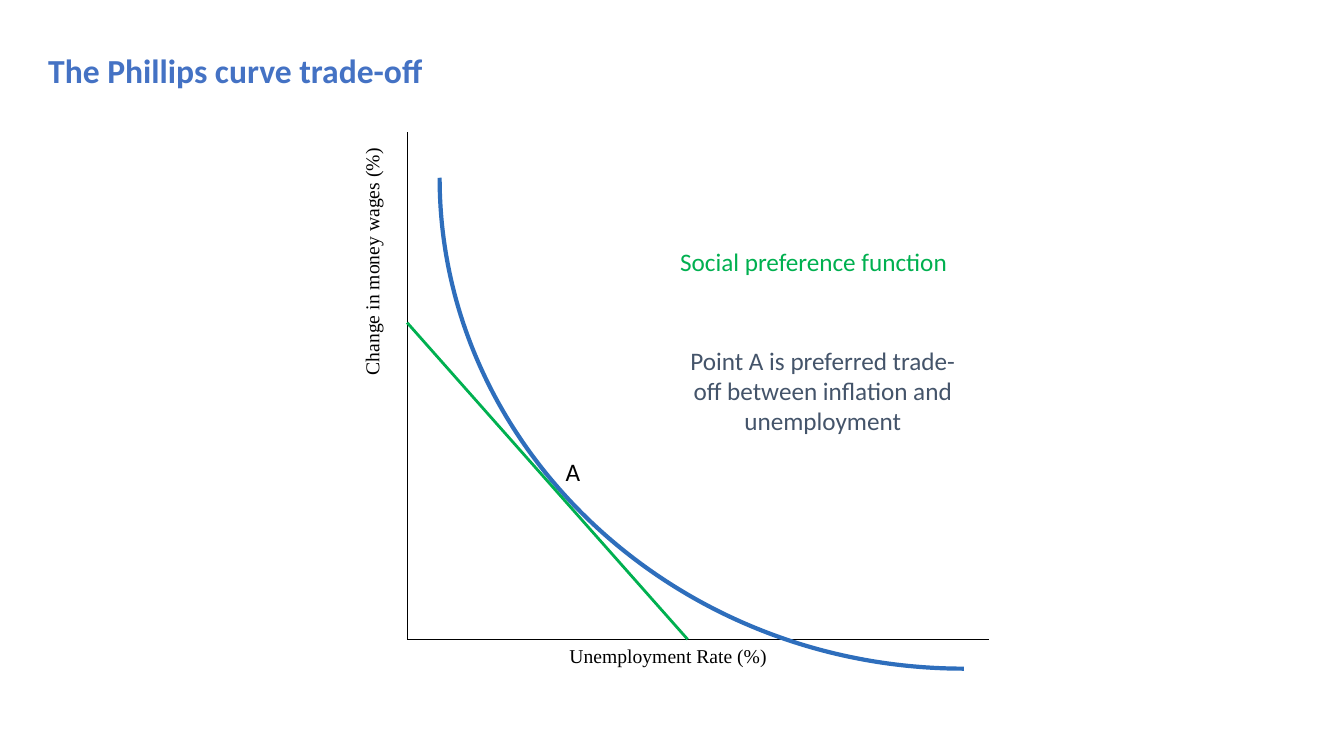
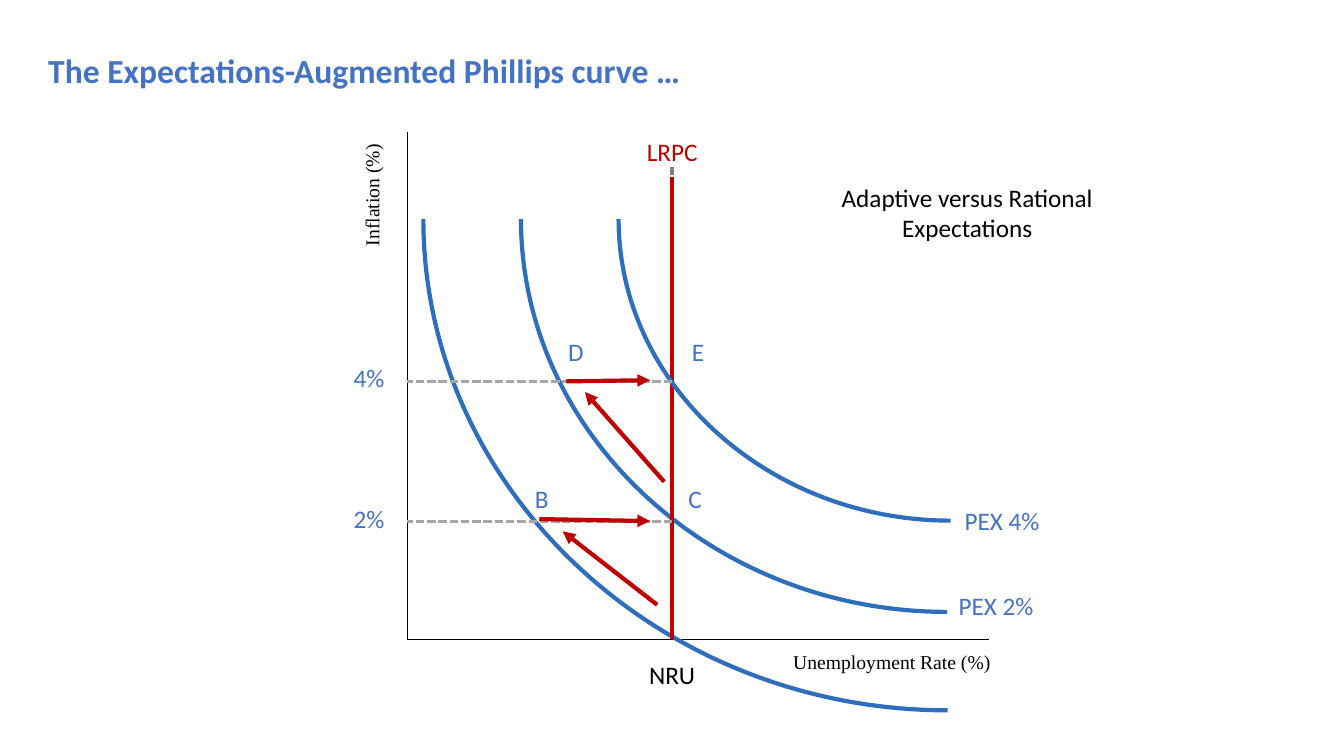
from dataclasses import dataclass
from typing import Optional

import pptx
import pptx.dml.color
import pptx.enum.dml
import pptx.enum.shapes
import pptx.enum.text
import pptx.oxml
import pptx.oxml.ns
import pptx.presentation
import pptx.slide
import pptx.text.text
import pptx.util

Cm = pptx.util.Cm
RGBColor = pptx.dml.color.RGBColor
ALIGN = pptx.enum.text.PP_ALIGN
DASHED = pptx.enum.dml.MSO_LINE.SQUARE_DOT
DRAWING_NS = pptx.oxml.ns.nsdecls("a")

BLACK = RGBColor(0x00, 0x00, 0x00)
BLUE = RGBColor(0x44, 0x72, 0xC4)
CURVE_BLUE = RGBColor(0x2E, 0x6E, 0xBC)
GREEN = RGBColor(0x00, 0xB0, 0x50)
RED = RGBColor(0xC0, 0x00, 0x00)
SLATE = RGBColor(0x44, 0x54, 0x6A)
GRAY = RGBColor(0x80, 0x80, 0x80)
LIGHT_GRAY = RGBColor(0xA6, 0xA6, 0xA6)

BODY_FONT = "Calibri"
AXIS_FONT = "Times New Roman"

ORIGIN_X, ORIGIN_Y = 10.26, 16.11
AXIS_RIGHT, AXIS_TOP = 24.93, 3.33
NRU_X = 16.94
QUARTER_ELLIPSE = 0.55


@dataclass(frozen=True)
class Label:
    text: str
    left: float
    top: float
    width: float
    height: float = 1.02
    color: RGBColor = BLUE
    align: Optional[ALIGN] = ALIGN.CENTER


@dataclass(frozen=True)
class AxisLabel:
    text: str
    left: float
    top: float
    width: float
    height: float
    align: ALIGN = ALIGN.JUSTIFY
    vertical: bool = False


@dataclass(frozen=True)
class Line:
    x1: float
    y1: float
    x2: float
    y2: float
    color: RGBColor = RED
    weight: float = 3
    dash: Optional[pptx.enum.dml.MSO_LINE] = None
    arrow: bool = False


@dataclass(frozen=True)
class Curve:
    left: float
    top: float
    width: float
    height: float


def write(frame: pptx.text.text.TextFrame, text: str, *, size: float = 18,
          color: RGBColor = BLACK, font: str = BODY_FONT, bold: bool = False,
          align: Optional[ALIGN] = None, space_after: Optional[float] = None,
          line_spacing: Optional[float] = None) -> None:
    frame.word_wrap = True
    paragraph = frame.paragraphs[0]
    paragraph.text = text
    paragraph.alignment = align
    paragraph.line_spacing = line_spacing
    if space_after is not None:
        paragraph.space_after = pptx.util.Pt(space_after)
    paragraph.font.size = pptx.util.Pt(size)
    paragraph.font.name = font
    paragraph.font.bold = bold
    paragraph.font.color.rgb = color


def add_frame(slide: pptx.slide.Slide, box: Label | AxisLabel) -> pptx.text.text.TextFrame:
    return slide.shapes.add_textbox(
        Cm(box.left), Cm(box.top), Cm(box.width), Cm(box.height)).text_frame


def add_label(slide: pptx.slide.Slide, label: Label) -> None:
    frame = add_frame(slide, label)
    write(frame, label.text, color=label.color, align=label.align)
    frame.auto_size = pptx.enum.text.MSO_AUTO_SIZE.SHAPE_TO_FIT_TEXT


def add_axis_label(slide: pptx.slide.Slide, label: AxisLabel) -> None:
    frame = add_frame(slide, label)
    write(frame, label.text, size=14, font=AXIS_FONT, align=label.align, space_after=6)
    if label.vertical:
        frame._txBody.bodyPr.set("vert", "vert270")
        frame.margin_left = frame.margin_right = Cm(0.25)
        frame.margin_top = frame.margin_bottom = Cm(0.13)
        frame.margin_left, frame.margin_top = frame.margin_top, frame.margin_left
        frame.margin_right, frame.margin_bottom = frame.margin_bottom, frame.margin_right


def add_line(slide: pptx.slide.Slide, line: Line) -> None:
    connector = slide.shapes.add_connector(
        pptx.enum.shapes.MSO_CONNECTOR.STRAIGHT,
        Cm(line.x1), Cm(line.y1), Cm(line.x2), Cm(line.y2))
    connector.line.color.rgb = line.color
    connector.line.width = pptx.util.Pt(line.weight)
    if line.dash is not None:
        connector.line.dash_style = line.dash
    properties = connector._element.spPr
    if line.arrow:
        outline = properties.find(pptx.oxml.ns.qn("a:ln"))
        outline.append(pptx.oxml.parse_xml(f'<a:tailEnd {DRAWING_NS} type="triangle"/>'))
    properties.append(pptx.oxml.parse_xml(f"<a:effectLst {DRAWING_NS}/>"))


def add_curve(slide: pptx.slide.Slide, curve: Curve) -> None:
    right, bottom = curve.left + curve.width, curve.top + curve.height
    builder = slide.shapes.build_freeform(Cm(right), Cm(bottom))
    builder.add_line_segments([
        (Cm(right - QUARTER_ELLIPSE * curve.width), Cm(bottom)),
        (Cm(curve.left), Cm(curve.top + QUARTER_ELLIPSE * curve.height)),
        (Cm(curve.left), Cm(curve.top)),
    ], close=False)
    arc = builder.convert_to_shape()
    segments = list(arc._element.iter(pptx.oxml.ns.qn("a:lnTo")))
    bezier = pptx.oxml.parse_xml(f"<a:cubicBezTo {DRAWING_NS}/>")
    segments[0].addprevious(bezier)
    for segment in segments:
        bezier.append(segment[0])
        segment.getparent().remove(segment)
    arc.shadow.inherit = False
    arc.fill.background()
    arc.line.color.rgb = CURVE_BLUE
    arc.line.width = pptx.util.Pt(3)


DRAW = {Label: add_label, AxisLabel: add_axis_label, Line: add_line, Curve: add_curve}


def add_diagram(deck: pptx.presentation.Presentation, heading: str,
                parts: list[Label | AxisLabel | Line | Curve]) -> None:
    slide = deck.slides.add_slide(deck.slide_layouts[5])
    title = slide.shapes.title
    title.left, title.top, title.width, title.height = Cm(0.96), Cm(0.72), Cm(32.51), Cm(2.21)
    write(title.text_frame, heading, size=24, color=BLUE, bold=True,
          align=ALIGN.LEFT, line_spacing=0.9)
    title.text_frame.vertical_anchor = pptx.enum.text.MSO_ANCHOR.MIDDLE
    axes = [Line(ORIGIN_X, ORIGIN_Y, AXIS_RIGHT, ORIGIN_Y, BLACK, 0.75),
            Line(ORIGIN_X, AXIS_TOP, ORIGIN_X, ORIGIN_Y, BLACK, 0.75)]
    for part in axes + parts:
        DRAW[type(part)](slide, part)


def rate_line(y: float) -> Line:
    return Line(NRU_X, y, ORIGIN_X, y, LIGHT_GRAY, 2, DASHED)


TRADE_OFF = [
    Curve(11.08, 4.48, 13.21, 12.37),
    AxisLabel("Change in money wages (%)", 8.94, AXIS_TOP, 1.32, 6.38, vertical=True),
    AxisLabel("Unemployment Rate (%)", 14.1, 16.1, 5.92, 0.81),
    Line(ORIGIN_X, 8.13, 17.33, ORIGIN_Y, GREEN, 2),
    Label("A", 13.74, 11.37, 1.4, color=BLACK),
    Label("Social preference function", 16.89, 6.08, 7.59, color=GREEN, align=None),
    Label("Point A is preferred trade-off between inflation and unemployment",
          16.94, 8.57, 7.59, 2.57, SLATE),
]

EXPECTATIONS = [
    Line(NRU_X, 15.85, NRU_X, 4.22, GRAY, 3, DASHED),
    Curve(10.67, 5.52, 13.21, 12.38),
    AxisLabel("Inflation (%)", 8.94, AXIS_TOP, 1.32, 3.18, ALIGN.CENTER, vertical=True),
    AxisLabel("Unemployment Rate (%)", 19.74, 16.26, 5.92, 0.81),
    Label("PEX 2%", 23.91, 14.76, 2.44, align=None),
    Curve(13.13, 5.52, 10.74, 9.9),
    Line(NRU_X, ORIGIN_Y, NRU_X, 4.47),
    Label("LRPC", 15.99, 3.3, 1.9, color=RED),
    rate_line(13.14),
    Curve(15.59, 5.52, 8.37, 7.6),
    Label("PEX 4%", 24.06, 12.62, 2.44, align=None),
    rate_line(9.62),
    Label("4%", 8.66, 9.01, 1.57, align=None),
    Label("2%", 8.66, 12.55, 1.57, align=None),
    Line(16.56, 15.24, 14.18, 13.39, arrow=True),
    Label("C", 16.84, 12.05, 1.35),
    Label("B", 12.98, 12.05, 1.35),
    Label("D", 13.84, 8.34, 1.35),
    Label("E", 16.92, 8.36, 1.35),
    Line(16.74, 12.14, 14.74, 9.88, arrow=True),
    Line(14.27, 9.61, 16.38, 9.58, arrow=True),
    Line(13.59, 13.08, 16.38, 13.13, arrow=True),
    Label("NRU", 15.72, 16.48, 2.44, color=BLACK),
    Label("Adaptive versus Rational Expectations", 20.58, 4.47, 7.59, 1.8, BLACK),
]


def main() -> None:
    deck = pptx.Presentation()
    deck.slide_width, deck.slide_height = Cm(33.87), Cm(19.05)
    add_diagram(deck, "The Phillips curve trade-off", TRADE_OFF)
    add_diagram(deck, "The Expectations-Augmented Phillips curve …", EXPECTATIONS)
    deck.save("out.pptx")


if __name__ == "__main__":
    main()
